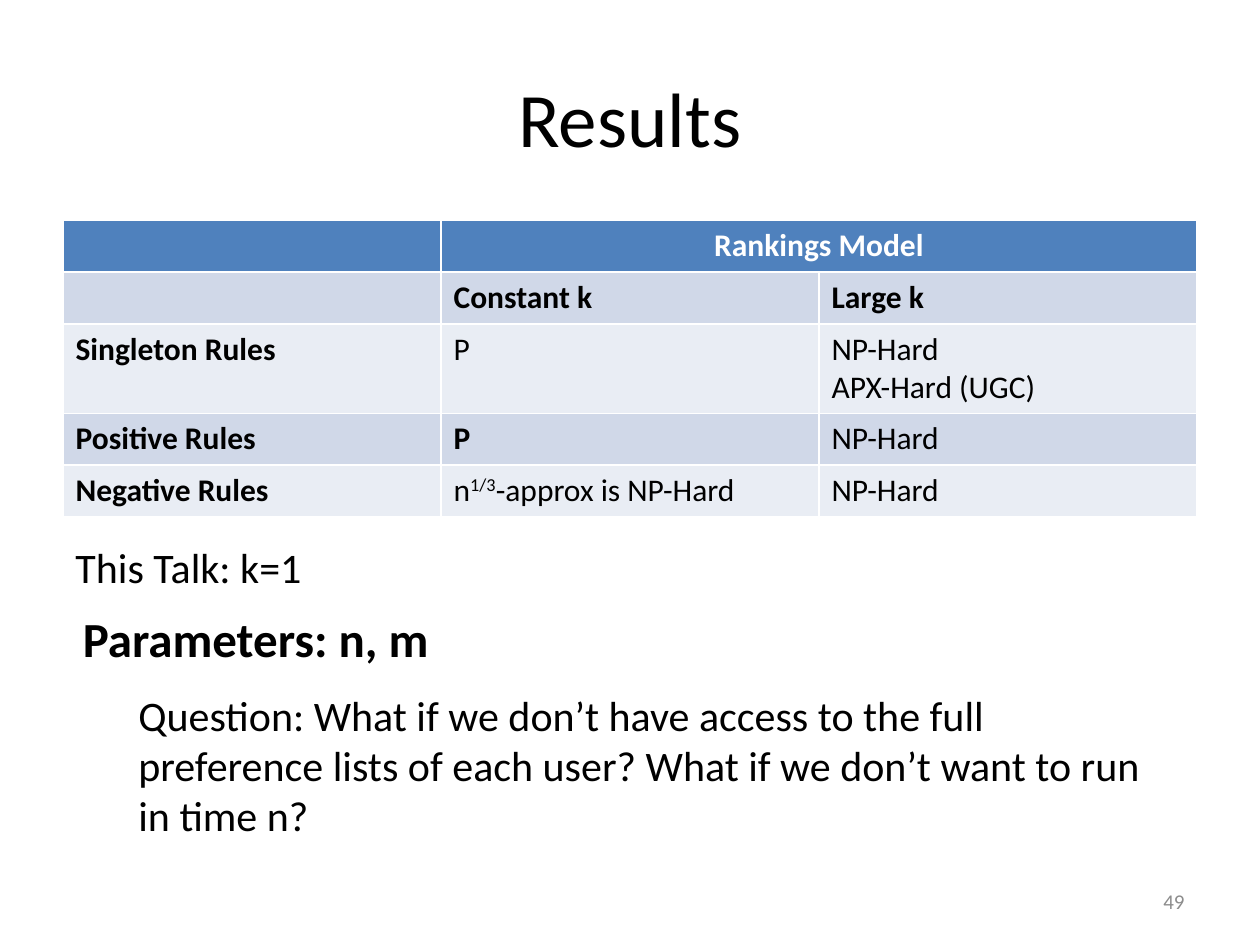
"""Build the slide of hardness results for the rankings model."""
from dataclasses import dataclass

from pptx import Presentation
from pptx import util as u
from pptx.dml import color as c
from pptx.enum import text as t


@dataclass(frozen=True)
class Theme:
    face: str = "Calibri"
    ink: str = "000000"
    pale: str = "FFFFFF"
    gray: str = "8C8C8C"
    head: str = "4F81BD"
    bands: tuple = ("D0D8E8", "E9EDF4")
    title: int = 44
    large: int = 28
    body: int = 24
    cell: int = 18
    small: int = 12


@dataclass(frozen=True)
class Label:
    words: str
    left: float
    top: float
    width: float
    height: float
    size: int
    tint: str = Theme.ink
    bold: bool = False
    wrap: bool = True
    align: t.PP_ALIGN = t.PP_ALIGN.LEFT
    anchor: t.MSO_ANCHOR = t.MSO_ANCHOR.TOP


@dataclass(frozen=True)
class Cell:
    words: str = ""
    bold: bool = False
    power: str = ""
    rest: str = ""


THEME = Theme()
MID = t.MSO_ANCHOR.MIDDLE
LABELS = (
    Label("Results", 0.5, 0.3, 9, 1.25, THEME.title,
          align=t.PP_ALIGN.CENTER, anchor=MID),
    Label("This Talk: k=1", 0.5, 4.25, 2.01, 0.5, THEME.body, wrap=False),
    Label("Question: What if we don’t have access to the full preference lists "
          "of each user? What if we don’t want to run in time n?",
          1, 5.42, 8.17, 1.31, THEME.body),
    Label("Parameters: n, m", 0.56, 4.78, 2.98, 0.57, THEME.large,
          bold=True, wrap=False),
    Label("49", 7.17, 6.95, 2.33, 0.4, THEME.small, THEME.gray,
          align=t.PP_ALIGN.RIGHT, anchor=MID),
)
ROWS = (
    (Cell(), Cell("Rankings Model", True), Cell()),
    (Cell(), Cell("Constant k", True), Cell("Large k", True)),
    (Cell("Singleton Rules", True), Cell("P"), Cell("NP-Hard\nAPX-Hard (UGC)")),
    (Cell("Positive Rules", True), Cell("P", True), Cell("NP-Hard")),
    (Cell("Negative Rules", True), Cell("n", False, "1/3", "-approx is NP-Hard"),
     Cell("NP-Hard")),
)
HEIGHTS = (0.41, 0.41, 0.7, 0.41, 0.41)


def style(font, size: int, tint: str, bold: bool) -> None:
    """Set face, size, colour and weight of a font."""
    font.name = THEME.face
    font.size = u.Pt(size)
    font.bold = bold
    font.color.rgb = c.RGBColor.from_string(tint)


def add_label(slide, label: Label) -> None:
    """Draw one text box."""
    box = slide.shapes.add_textbox(*map(
        u.Inches, (label.left, label.top, label.width, label.height)))
    frame = box.text_frame
    frame.text = label.words
    frame.word_wrap = label.wrap
    frame.vertical_anchor = label.anchor
    para = frame.paragraphs[0]
    para.alignment = label.align
    style(para.runs[0].font, label.size, label.tint, label.bold)


def fill_cell(spot, cell: Cell, fill: str, tint: str) -> None:
    """Write and colour one table cell."""
    spot.fill.solid()
    spot.fill.fore_color.rgb = c.RGBColor.from_string(fill)
    frame = spot.text_frame
    frame.text = cell.words
    if cell.power:
        power, rest = (frame.paragraphs[0].add_run() for _ in range(2))
        power.text, rest.text = cell.power, cell.rest
        power.font._element.set("baseline", "30000")
    for para in frame.paragraphs:
        style(para.font, THEME.cell, tint, cell.bold)
        for run in para.runs:
            style(run.font, THEME.cell, tint, cell.bold)


def add_grid(slide) -> None:
    """Draw the table of results."""
    grid = slide.shapes.add_table(
        len(ROWS), len(ROWS[0]), u.Inches(0.5), u.Inches(1.75),
        u.Inches(9), u.Inches(sum(HEIGHTS))).table
    for i, row in enumerate(ROWS):
        grid.rows[i].height = u.Inches(HEIGHTS[i])
        fill = THEME.bands[(i - 1) % 2] if i else THEME.head
        tint = THEME.ink if i else THEME.pale
        for j, cell in enumerate(row):
            fill_cell(grid.cell(i, j), cell, fill, tint)
    grid.cell(0, 1).merge(grid.cell(0, 2))
    grid.cell(0, 1).text_frame.paragraphs[0].alignment = t.PP_ALIGN.CENTER


def main() -> None:
    """Build and save the deck."""
    deck = Presentation()
    deck.slide_width, deck.slide_height = u.Inches(10), u.Inches(7.5)
    slide = deck.slides.add_slide(deck.slide_layouts[6])
    add_grid(slide)
    for label in LABELS:
        add_label(slide, label)
    deck.save("out.pptx")


if __name__ == "__main__":
    main()
